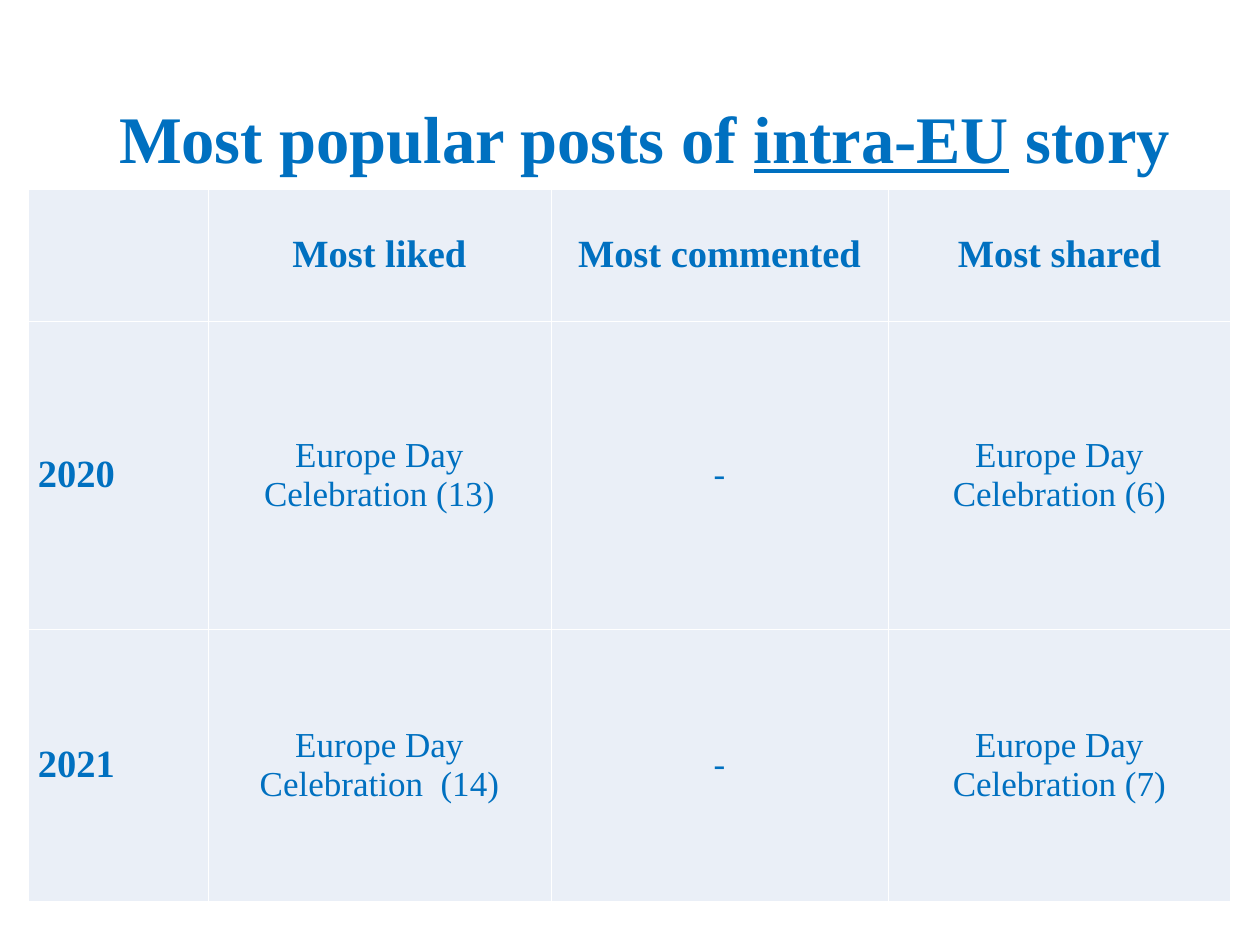
import pptx
import pptx.util
import pptx.dml.color
import pptx.enum.text
import pptx.oxml

PX = 914400 / 126
COLORS = {"text": "0070C0", "cell": "EAEFF7", "line": "FFFFFF"}
FONT = "Times New Roman"
ALIGN = pptx.enum.text.PP_ALIGN
MIDDLE = pptx.enum.text.MSO_ANCHOR.MIDDLE


def px(size):
    return pptx.util.Emu(round(size * PX))


def style(run, size, bold):
    run.font.name = FONT
    run.font.size = pptx.util.Pt(size)
    run.font.bold = bold
    run.font.color.rgb = pptx.dml.color.RGBColor.from_string(COLORS["text"])


deck = pptx.Presentation()
deck.slide_width, deck.slide_height = px(1260), px(945)
slide = deck.slides.add_slide(deck.slide_layouts[5])

title = slide.shapes.title
title.left, title.top, title.width, title.height = px(29), px(77), px(1231), px(130)
frame = title.text_frame
frame.auto_size = pptx.enum.text.MSO_AUTO_SIZE.NONE
frame.vertical_anchor = MIDDLE
head = frame.paragraphs[0]
head.alignment = ALIGN.CENTER
head.line_spacing = 0.9
for text, under in [("Most popular posts of ", False), ("intra-EU", True), (" story", False)]:
    run = head.add_run()
    run.text = text
    style(run, 38, True)
    run.font.underline = under

rows = [
    ["", "Most liked", "Most commented", "Most shared"],
    ["2020", "Europe Day Celebration (13)", "-", "Europe Day Celebration (6)"],
    ["2021", "Europe Day Celebration  (14)", "-", "Europe Day Celebration (7)"],
]
widths = [180, 343, 337, 343]
heights = [132, 308, 272]
table = slide.shapes.add_table(
    len(rows), len(widths), px(28), px(189), px(sum(widths)), px(sum(heights))
).table
for col, width in zip(table.columns, widths):
    col.width = px(width)
for row, height in zip(table.rows, heights):
    row.height = px(height)

for r, texts in enumerate(rows):
    for c, text in enumerate(texts):
        cell = table.cell(r, c)
        cell.vertical_anchor = MIDDLE
        cell.margin_left = px(4 if c else 10)
        cell.margin_right = px(4)
        cell.margin_top = cell.margin_bottom = 0
        props = cell._tc.get_or_add_tcPr()
        for side in "LRTB":
            props.append(pptx.oxml.parse_xml(
                f'<a:ln{side} xmlns:a="http://schemas.openxmlformats.org/drawingml/2006/main" w="6350">'
                f'<a:solidFill><a:srgbClr val="{COLORS["line"]}"/></a:solidFill></a:ln{side}>'
            ))
        cell.fill.solid()
        cell.fill.fore_color.rgb = pptx.dml.color.RGBColor.from_string(COLORS["cell"])
        cell.text_frame.text = text
        para = cell.text_frame.paragraphs[0]
        para.alignment = ALIGN.CENTER if c else ALIGN.LEFT
        label = r == 0 or c == 0
        for run in para.runs:
            style(run, 22 if label else 20, label)

deck.save("out.pptx")
